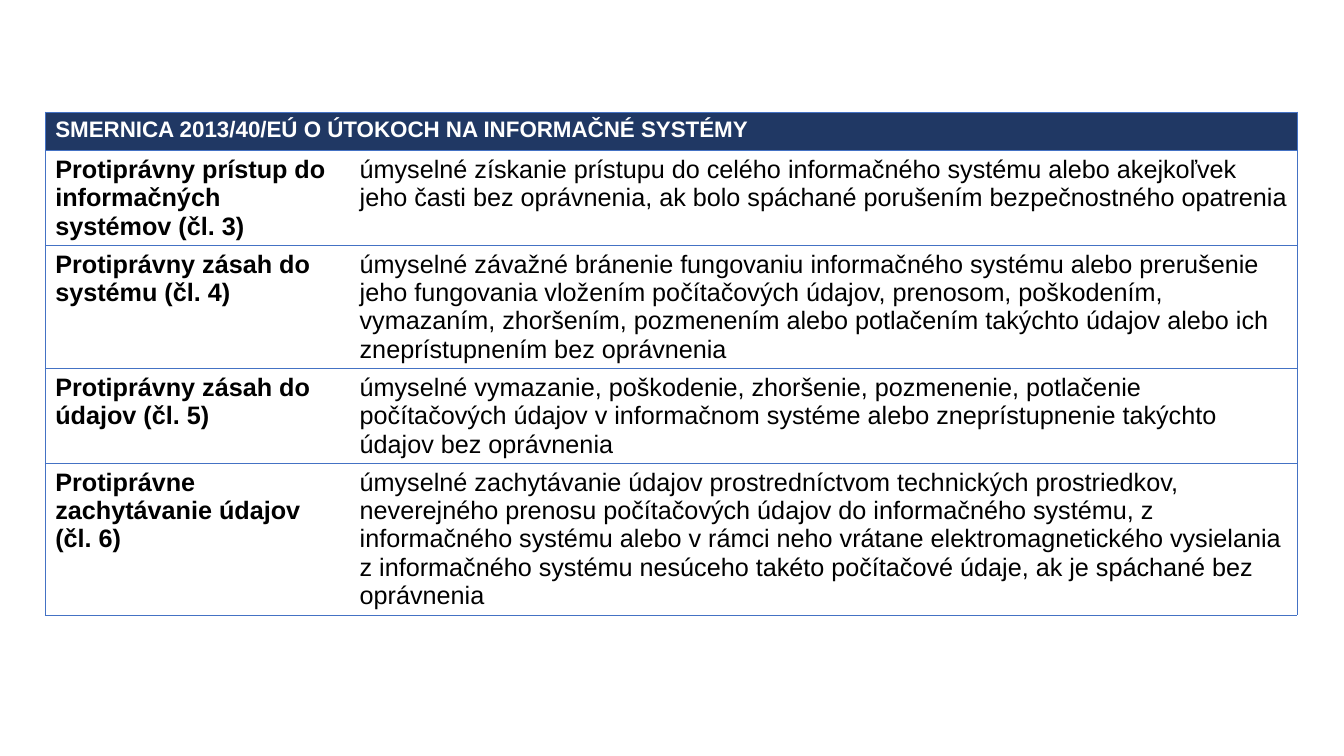
from lxml.etree import SubElement
from pptx import Presentation
from pptx.dml.color import RGBColor
from pptx.oxml.ns import qn
from pptx.util import Cm, Pt

NAVY, BLUE, WHITE, BLACK = "203864", "4472C4", "FFFFFF", "000000"
TITLE = "SMERNICA 2013/40/EÚ O ÚTOKOCH NA INFORMAČNÉ SYSTÉMY"
OFFENCES = [
    ("Protiprávny prístup do informačných systémov (čl. 3)",
     "úmyselné získanie prístupu do celého informačného systému alebo "
     "akejkoľvek jeho časti bez oprávnenia, ak bolo spáchané porušením "
     "bezpečnostného opatrenia"),
    ("Protiprávny zásah do systému (čl. 4)",
     "úmyselné závažné bránenie fungovaniu informačného systému alebo "
     "prerušenie jeho fungovania vložením počítačových údajov, prenosom, "
     "poškodením, vymazaním, zhoršením, pozmenením alebo potlačením takýchto "
     "údajov alebo ich zneprístupnením bez oprávnenia"),
    ("Protiprávny zásah do údajov (čl. 5)",
     "úmyselné vymazanie, poškodenie, zhoršenie, pozmenenie, potlačenie "
     "počítačových údajov v informačnom systéme alebo zneprístupnenie "
     "takýchto údajov bez oprávnenia"),
    ("Protiprávne zachytávanie údajov (čl. 6)",
     "úmyselné zachytávanie údajov prostredníctvom technických prostriedkov, "
     "neverejného prenosu počítačových údajov do informačného systému, "
     "z informačného systému alebo v rámci neho vrátane elektromagnetického "
     "vysielania z informačného systému nesúceho takéto počítačové údaje, "
     "ak je spáchané bez oprávnenia"),
]
COL_WIDTHS = [7.67, 23.88]
ROW_HEIGHTS = [0.98, 2.39, 3.1, 2.39, 3.82]


def rgb(color):
    return RGBColor.from_string(color)


def add_text(tf, text, size=18, bold=False, color=BLACK):
    r = tf.paragraphs[0].add_run()
    r.text = text
    r.font.name = "Arial"
    r.font.size = Pt(size)
    r.font.bold = bold
    r.font.color.rgb = rgb(color)


def set_borders(cell, sides):
    """Draw the given sides (letters of LRTB) in blue and clear the others."""
    tc_pr = cell._tc.get_or_add_tcPr()
    for side in "LRTB":
        ln = SubElement(tc_pr, qn(f"a:ln{side}"), w=str(Pt(0.5)))
        if side in sides:
            fill = SubElement(ln, qn("a:solidFill"))
            SubElement(fill, qn("a:srgbClr"), val=BLUE)
        else:
            SubElement(ln, qn("a:noFill"))


def fill_cell(cell, text, sides, fill=None, **fmt):
    add_text(cell.text_frame, text, **fmt)
    set_borders(cell, sides)
    if fill:
        cell.fill.solid()
        cell.fill.fore_color.rgb = rgb(fill)
    else:
        cell.fill.background()


def add_offence_table(slide):
    frame = slide.shapes.add_table(
        len(ROW_HEIGHTS), len(COL_WIDTHS), Cm(1.14), Cm(2.82),
        Cm(sum(COL_WIDTHS)), Cm(sum(ROW_HEIGHTS)))
    table = frame.table
    table.horz_banding = False
    for col, width in zip(table.columns, COL_WIDTHS):
        col.width = Cm(width)
    for row, height in zip(table.rows, ROW_HEIGHTS):
        row.height = Cm(height)

    header = table.cell(0, 0)
    header.merge(table.cell(0, 1))
    fill_cell(header, TITLE, "LRTB", fill=NAVY, size=16, bold=True, color=WHITE)
    for i, (name, definition) in enumerate(OFFENCES, start=1):
        fill_cell(table.cell(i, 0), name, "LTB", bold=True)
        fill_cell(table.cell(i, 1), definition, "RTB")


def main():
    prs = Presentation()
    prs.slide_width, prs.slide_height = Cm(33.87), Cm(19.05)
    add_offence_table(prs.slides.add_slide(prs.slide_layouts[6]))
    prs.save("out.pptx")


if __name__ == "__main__":
    main()
